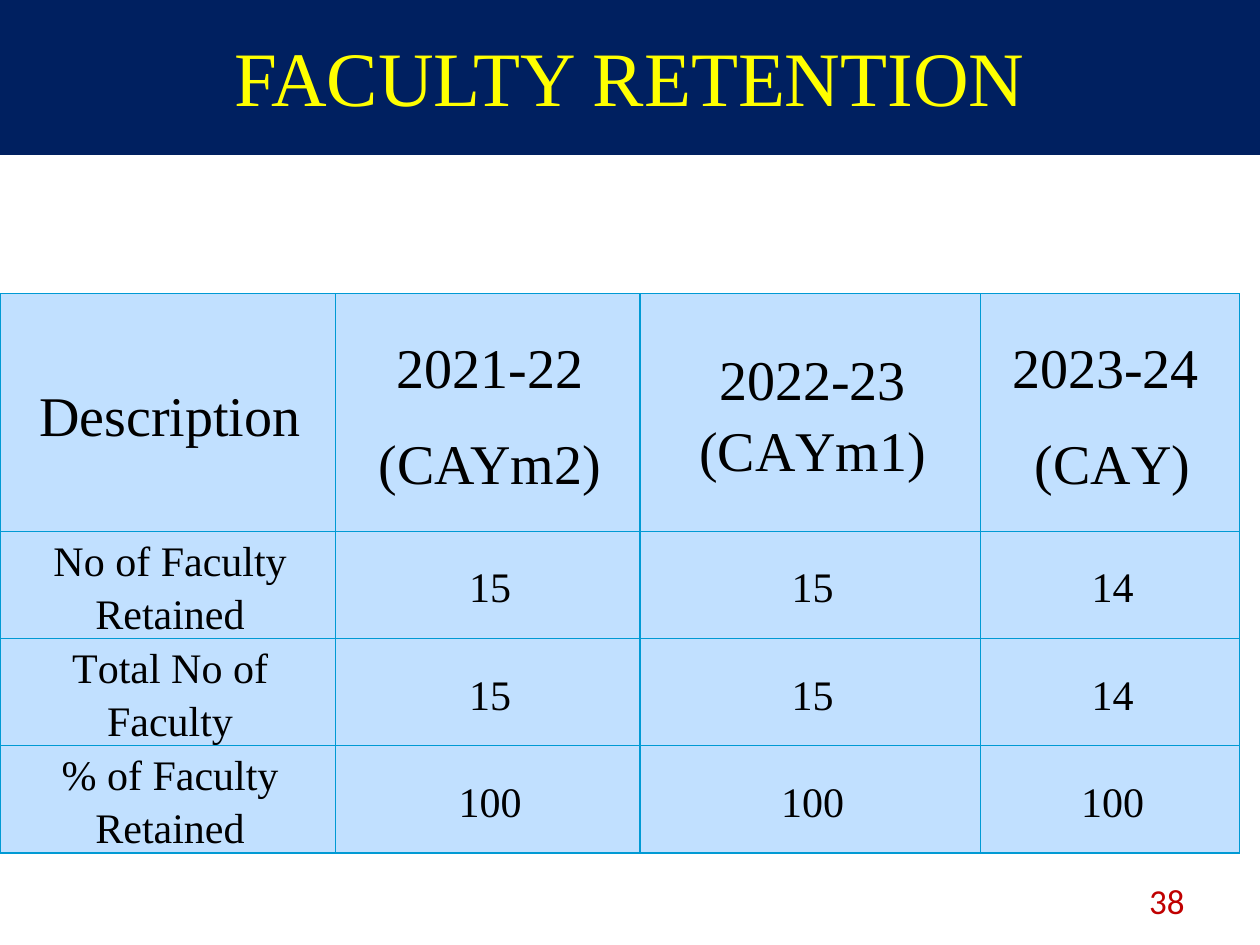
from lxml.etree import SubElement
from pptx import Presentation
from pptx.dml.color import RGBColor
from pptx.enum.text import MSO_ANCHOR, PP_ALIGN
from pptx.oxml.ns import qn
from pptx.util import Inches, Pt

SERIF = "Times New Roman"
COLUMNS = [2.66, 2.42, 2.7, 2.06]
ROWS = [1.89, 0.85, 0.85, 0.85]
CELLS = [
    [[["Description"]], [["2021-22"], ["(CAYm2)"]],
     [["2022-23 (C", ("A", -0.7), "Ym1)"]],
     [["2023-24 "], ["(C", ("A", -0.7), "Y)"]]],
    [[["No of Faculty Retained"]], [["15"]], [["15"]], [["14"]]],
    [[[("T", -0.8), "otal No of Faculty"]], [["15"]], [["15"]], [["14"]]],
    [[["% of Faculty Retained"]], [["100"]], [["100"]], [["100"]]],
]


def color(value):
    """Turn a hex string into a colour."""
    return RGBColor.from_string(value)


def paint(target, value):
    """Give a shape or cell a solid fill."""
    target.fill.solid()
    target.fill.fore_color.rgb = color(value)


def add_span(para, text, size, font, value, spacing=0):
    """Add one formatted run, with letter spacing in points."""
    span = para.add_run()
    span.text = text
    span.font.size = Pt(size)
    span.font.name = font
    span.font.color.rgb = color(value)
    if spacing:
        span.font._element.set("spc", str(round(spacing * 100)))


def write_line(shape, text, size, font, value, alignment):
    """Write a single vertically centred line in a shape."""
    frame = shape.text_frame
    frame.word_wrap = True
    frame.vertical_anchor = MSO_ANCHOR.MIDDLE
    para = frame.paragraphs[0]
    para.alignment = alignment
    add_span(para, text, size, font, value)


def add_title(page, text):
    """Fill the title placeholder as a full-width banner."""
    title = page.shapes.title
    title.left, title.top = 0, Inches(-0.03)
    title.width, title.height = Inches(10), Inches(1.26)
    paint(title, "002060")
    write_line(title, text, 44, SERIF, "FFFF00", PP_ALIGN.CENTER)


def add_borders(cell, value, width):
    """Draw the four borders of a cell."""
    properties = cell._tc.get_or_add_tcPr()
    for position, side in enumerate(("a:lnL", "a:lnR", "a:lnT", "a:lnB")):
        line = properties.makeelement(qn(side), {"w": str(Pt(width))})
        fill = SubElement(line, qn("a:solidFill"))
        SubElement(fill, qn("a:srgbClr"), val=value)
        properties.insert(position, line)


def fill_cell(cell, lines, size):
    """Format a cell and write its paragraphs."""
    paint(cell, "C1E0FF")
    add_borders(cell, "009AD4", 0.75)
    cell.vertical_anchor = MSO_ANCHOR.MIDDLE
    cell.margin_left = cell.margin_right = 0
    cell.margin_top = cell.margin_bottom = 0
    frame = cell.text_frame
    for index, spans in enumerate(lines):
        para = frame.add_paragraph() if index else frame.paragraphs[0]
        para.alignment = PP_ALIGN.CENTER
        para.line_spacing = 1.15
        para.space_before = Pt(4.1 if index else 0)
        para.space_after = Pt(10)
        para._p.get_or_add_pPr().set("marL", str(Inches(0.04)))
        for span in spans:
            text, spacing = (span, 0) if isinstance(span, str) else span
            add_span(para, text, size, SERIF, "000000", spacing)


def add_retention_table(page):
    """Add the table of faculty retained per year."""
    table = page.shapes.add_table(
        len(ROWS), len(COLUMNS), 0, Inches(2.33),
        Inches(sum(COLUMNS)), Inches(sum(ROWS))).table
    for column, width in zip(table.columns, COLUMNS):
        column.width = Inches(width)
    for index, (row, height) in enumerate(zip(table.rows, ROWS)):
        row.height = Inches(height)
        for cell, lines in zip(row.cells, CELLS[index]):
            fill_cell(cell, lines, 24 if index else 32)


def add_page_number(page, text):
    """Add the page number at the lower right."""
    box = page.shapes.add_textbox(
        Inches(7.17), Inches(6.95), Inches(2.33), Inches(0.4))
    write_line(box, text, 20, "Calibri", "C00000", PP_ALIGN.RIGHT)


def main():
    """Build and save the slide."""
    deck = Presentation()
    deck.slide_width, deck.slide_height = Inches(10), Inches(7.5)
    page = deck.slides.add_slide(deck.slide_layouts[5])
    add_title(page, "FACULTY RETENTION")
    add_retention_table(page)
    add_page_number(page, "38")
    deck.save("out.pptx")


if __name__ == "__main__":
    main()
